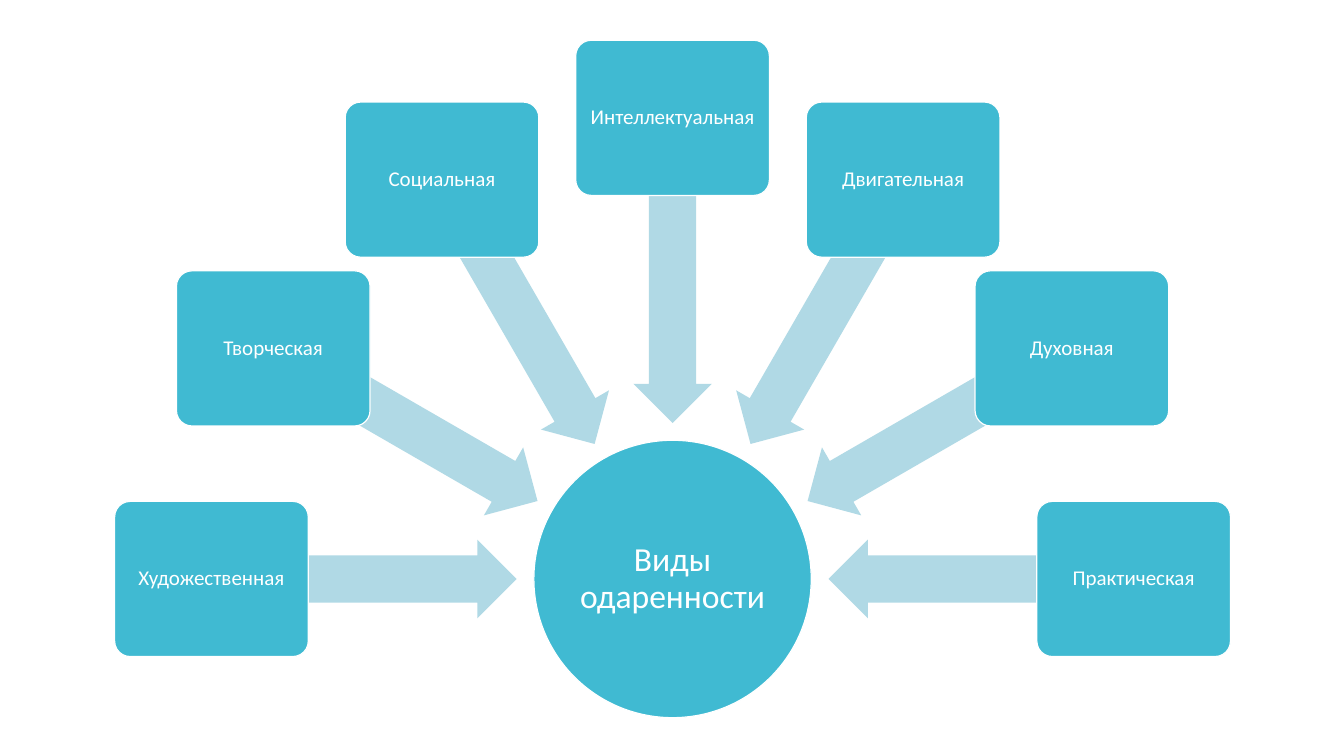
import math

import pptx
import pptx.dml.color
import pptx.enum.shapes
import pptx.enum.text
import pptx.util

Cm = pptx.util.Cm
Pt = pptx.util.Pt
Shape = pptx.enum.shapes.MSO_SHAPE

KINDS = ["Художественная", "Творческая", "Социальная", "Интеллектуальная",
         "Двигательная", "Духовная", "Практическая"]

# Lengths in centimetres, angles in degrees
CENTER_X, CENTER_Y = 16.95, 14.59
HUB_SIZE = 6.99
BOX_WIDTH, BOX_HEIGHT = 4.88, 3.91
BOX_RADIUS = 11.62
ARROW_LENGTH, ARROW_WIDTH = 7.7, 1.98
ARROW_RADIUS = 7.78
FIRST_ANGLE = 180
STEP = 180 / (len(KINDS) - 1)


def color(value):
    return pptx.dml.color.RGBColor.from_string(value)


class RadialDiagram:
    FONT = "Calibri"
    MAIN = "40BAD2"
    PALE = "B0D9E5"
    WHITE = "FFFFFF"

    def __init__(self, page):
        self.page = page

    def shape(self, kind, angle, radius, width, height, fill):
        """Add a shape centred at an angle and distance from the hub."""
        x = CENTER_X + radius * math.cos(math.radians(angle))
        y = CENTER_Y + radius * math.sin(math.radians(angle))
        shape = self.page.shapes.add_shape(
            kind, Cm(x - width / 2), Cm(y - height / 2), Cm(width), Cm(height))
        shape.shadow.inherit = False
        shape.fill.solid()
        shape.fill.fore_color.rgb = color(fill)
        return shape

    def label(self, shape, text, size, margin):
        shape.line.color.rgb = color(self.WHITE)
        shape.line.width = Pt(0.85)
        frame = shape.text_frame
        frame.word_wrap = True
        frame.vertical_anchor = pptx.enum.text.MSO_ANCHOR.MIDDLE
        frame.margin_left = frame.margin_right = Cm(margin)
        frame.margin_top = frame.margin_bottom = Cm(margin)
        para = frame.paragraphs[0]
        para.alignment = pptx.enum.text.PP_ALIGN.CENTER
        para.line_spacing = 0.9
        span = para.add_run()
        span.text = text
        span.font.name = self.FONT
        span.font.size = Pt(size)
        span.font.color.rgb = color(self.WHITE)

    def hub(self, text):
        circle = self.shape(Shape.OVAL, 0, 0, HUB_SIZE, HUB_SIZE, self.MAIN)
        self.label(circle, text, 24, 0.05)

    def arrow(self, angle):
        arrow = self.shape(Shape.LEFT_ARROW, angle, ARROW_RADIUS,
                           ARROW_LENGTH, ARROW_WIDTH, self.PALE)
        arrow.adjustments[0] = 0.6
        arrow.adjustments[1] = 0.5
        arrow.line.fill.background()
        arrow.rotation = angle % 360

    def box(self, angle, text):
        box = self.shape(Shape.ROUNDED_RECTANGLE, angle, BOX_RADIUS,
                         BOX_WIDTH, BOX_HEIGHT, self.MAIN)
        box.adjustments[0] = 0.1
        self.label(box, text, 15, 0.08)


def main():
    deck = pptx.Presentation()
    deck.slide_width, deck.slide_height = Cm(33.87), Cm(19.05)
    page = deck.slides.add_slide(deck.slide_layouts[6])
    diagram = RadialDiagram(page)
    diagram.hub("Виды одаренности")
    for index, kind in enumerate(KINDS):
        angle = FIRST_ANGLE + index * STEP
        diagram.arrow(angle)
        diagram.box(angle, kind)
    deck.save("out.pptx")


if __name__ == "__main__":
    main()
